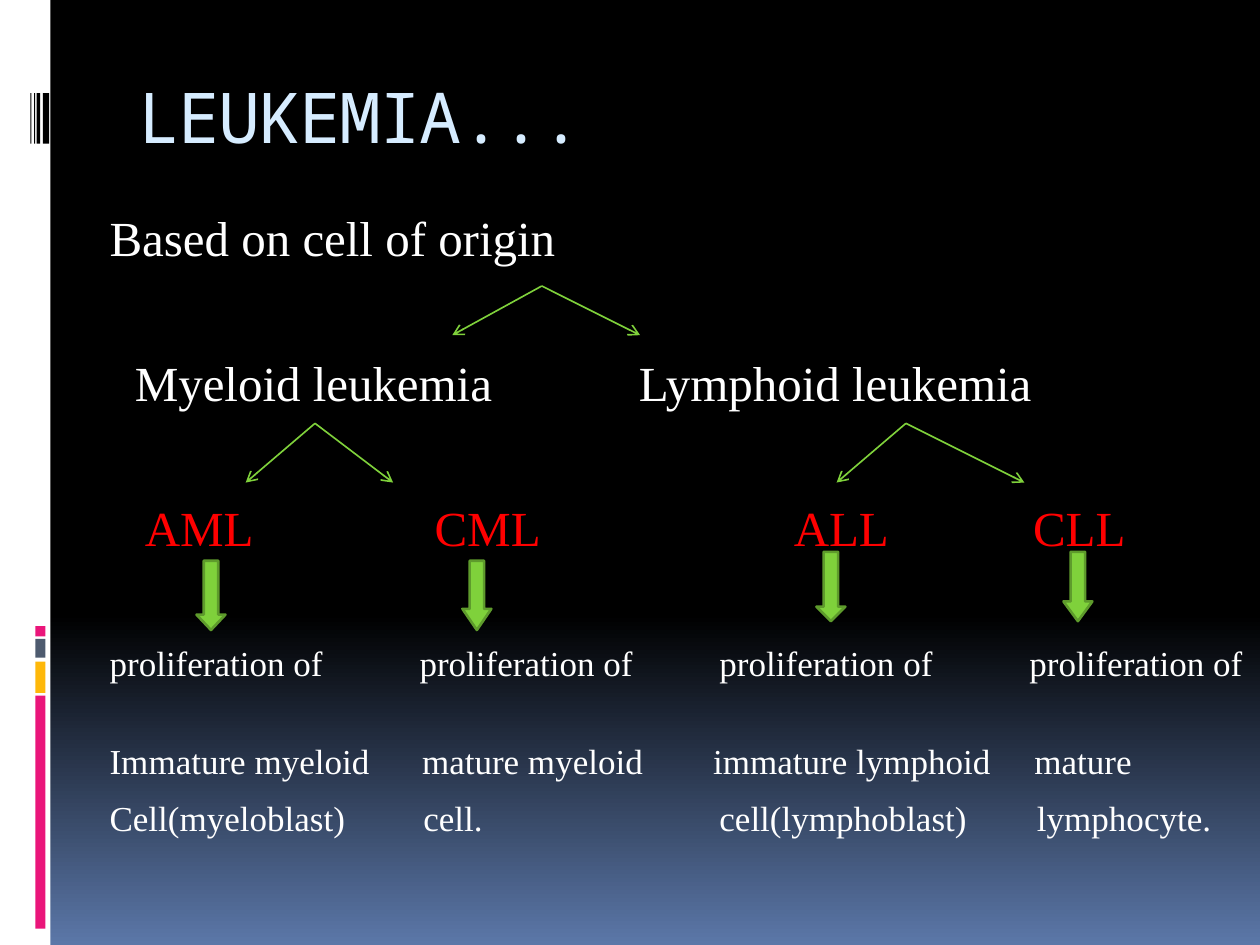
from dataclasses import dataclass

from lxml import etree
from pptx import Presentation
from pptx import util as u
from pptx.dml.color import RGBColor
from pptx.enum import shapes, text
from pptx.oxml.ns import qn

BLACK = RGBColor(0x00, 0x00, 0x00)
WHITE = RGBColor(0xFF, 0xFF, 0xFF)
DUSK_BLUE = RGBColor(0x5B, 0x77, 0xA8)
PINK = RGBColor(0xEA, 0x15, 0x7A)
AMBER = RGBColor(0xFE, 0xB8, 0x0A)
SLATE = RGBColor(0x4E, 0x5B, 0x6F)
ICE = RGBColor(0xD6, 0xEC, 0xFF)
RED = RGBColor(0xFF, 0x00, 0x00)
GREEN = RGBColor(0x7F, 0xD1, 0x3B)
DARK_GREEN = RGBColor(0x5E, 0x9B, 0x2C)

COLUMNS, ROWS = 100, 75
TEXT_LEFT = 8.7


@dataclass
class Deck:
    """Style and current slide; lengths are columns and rows of the grid."""
    prs: object
    slide: object
    title_font: str = "Noto Sans Mono"
    body_font: str = "Times New Roman"

    def x(self, columns):
        return round(self.prs.slide_width * columns / COLUMNS)

    def y(self, rows):
        return round(self.prs.slide_height * rows / ROWS)

    def box(self, left, top, width, height):
        return self.x(left), self.y(top), self.x(width), self.y(height)

    def background(self):
        fill = self.slide.background.fill
        fill.gradient()
        fill.gradient_angle = 270
        for stop, position, color in zip(fill.gradient_stops, (0.65, 1), (BLACK, DUSK_BLUE)):
            stop.position = position
            stop.color.rgb = color

    def block(self, place, color, kind=shapes.MSO_SHAPE.RECTANGLE):
        shape = self.slide.shapes.add_shape(kind, *self.box(*place))
        shape.shadow.inherit = False
        shape.fill.solid()
        shape.fill.fore_color.rgb = color
        shape.line.fill.background()
        return shape

    def down_arrow(self, left, top, head):
        arrow = self.block((left, top, 2.3, 5.5), GREEN, shapes.MSO_SHAPE.DOWN_ARROW)
        arrow.adjustments[0] = 0.5
        arrow.adjustments[1] = head
        arrow.line.color.rgb = DARK_GREEN
        arrow.line.width = u.Pt(1.5)

    def branch(self, start, end):
        line = self.slide.shapes.add_connector(
            shapes.MSO_CONNECTOR.STRAIGHT,
            self.x(start[0]), self.y(start[1]), self.x(end[0]), self.y(end[1]))
        line.line.color.rgb = GREEN
        line.line.width = u.Pt(0.94)
        properties = line.line._get_or_add_ln()
        etree.SubElement(properties, qn("a:tailEnd"), type="arrow")
        etree.SubElement(line._element.spPr, qn("a:effectLst"))

    def text_frame(self, place, left_inset, top_inset):
        frame = self.slide.shapes.add_textbox(*self.box(*place)).text_frame
        frame.word_wrap = True
        frame.vertical_anchor = text.MSO_ANCHOR.TOP
        frame.margin_left, frame.margin_top = self.x(left_inset), self.y(top_inset)
        frame.margin_right = frame.margin_bottom = 0
        return frame

    def format_run(self, paragraph, font, size, color):
        run = paragraph.runs[0]
        run.font.name = font
        run.font.size = u.Pt(size)
        run.font.color.rgb = color
        return run

    def title(self, words):
        paragraph = self.text_frame((10, 5.6, 85, 10), 1, 0.2).paragraphs[0]
        paragraph.text = words
        run = self.format_run(paragraph, self.title_font, 40, ICE)
        run._r.get_or_add_rPr().set("spc", "-100")

    def body(self, lines):
        """Set lines of (size, colour, space before, {column: words}) on tab stops."""
        frame = self.text_frame((TEXT_LEFT, 15.6, COLUMNS - TEXT_LEFT, 53.9), 0, 0.9)
        for index, (size, color, before, entries) in enumerate(lines):
            paragraph = frame.add_paragraph() if index else frame.paragraphs[0]
            paragraph.text = "".join(
                words if column == TEXT_LEFT else "\t" + words
                for column, words in entries.items())
            paragraph.space_before = u.Pt(before)
            self.format_run(paragraph, self.body_font, size, color)
            stops = [column for column in entries if column != TEXT_LEFT]
            if stops:
                tabs = etree.SubElement(paragraph._p.get_or_add_pPr(), qn("a:tabLst"))
                for column in stops:
                    etree.SubElement(tabs, qn("a:tab"), algn="l",
                                     pos=str(self.x(column - TEXT_LEFT)))


def main():
    prs = Presentation()
    prs.slide_width, prs.slide_height = u.Inches(10), u.Inches(7.5)
    deck = Deck(prs, prs.slides.add_slide(prs.slide_layouts[6]))
    deck.background()

    deck.block((0, 0, 4, ROWS), WHITE)
    for top, height, color in ((55.2, 18.5, PINK), (52.5, 2.5, AMBER),
                               (50.7, 1.5, SLATE), (49.7, 0.8, PINK)):
        deck.block((2.8, top, 0.8, height), color)
    for left, width in ((3.4, 0.5), (2.9, 0.3), (2.7, 0.1), (2.4, 0.1)):
        deck.block((left, 7.4, width, 4), BLACK)

    deck.title("LEUKEMIA...")
    tight, level_gap = 8.4, 49
    origin = "proliferation of"
    deck.body((
        (28, WHITE, 0, {TEXT_LEFT: "Based on cell of origin"}),
        (28, WHITE, level_gap, {10.7: "Myeloid leukemia", 50.7: "Lymphoid leukemia"}),
        (28, RED, level_gap, {11.5: "AML", 34.5: "CML", 63: "ALL", 82: "CLL"}),
        (20, WHITE, level_gap, dict.fromkeys((TEXT_LEFT, 33.3, 57.1, 81.7), origin)),
        (20, WHITE, 32, {TEXT_LEFT: "Immature myeloid", 33.5: "mature myeloid",
                         56.6: "immature lymphoid", 82.1: "mature"}),
        (20, WHITE, tight, {TEXT_LEFT: "Cell(myeloblast)", 33.6: "cell.",
                            57.1: "cell(lymphoblast)", 82.3: "lymphocyte."}),
    ))

    for fork, tips, tip_row in (((43, 22.7), (35.9, 50.8), 26.6),
                                ((25, 33.6), (19.5, 31.2), 38.3),
                                ((71.9, 33.6), (66.4, 81.3), 38.3)):
        for tip in tips:
            deck.branch(fork, (tip, tip_row))

    for left, top, head in ((15.6, 44.5, 0.53), (36.7, 44.5, 0.73),
                            (84.4, 43.8, 0.68), (64.8, 43.8, 0.5)):
        deck.down_arrow(left, top, head)

    prs.save("out.pptx")


if __name__ == "__main__":
    main()
